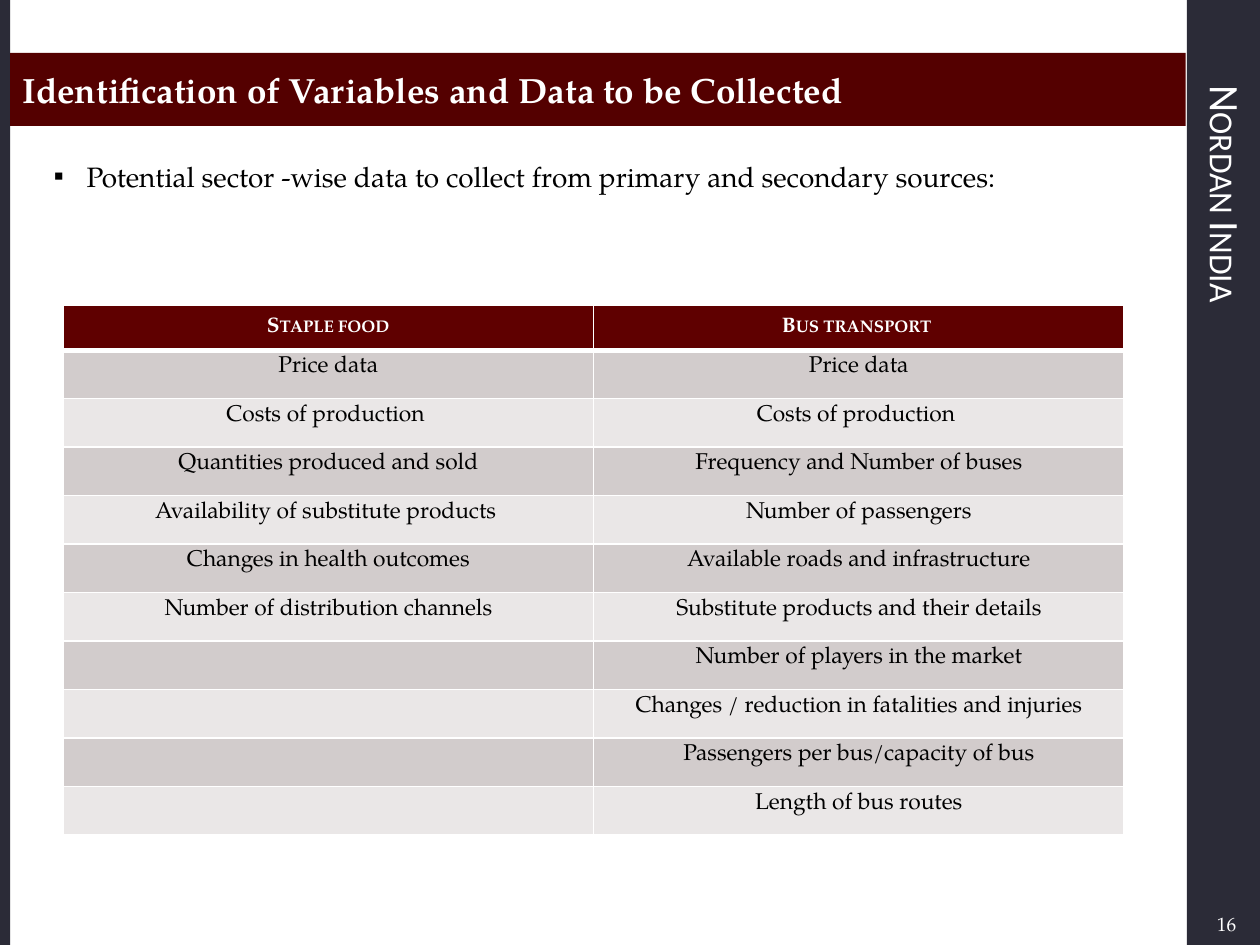
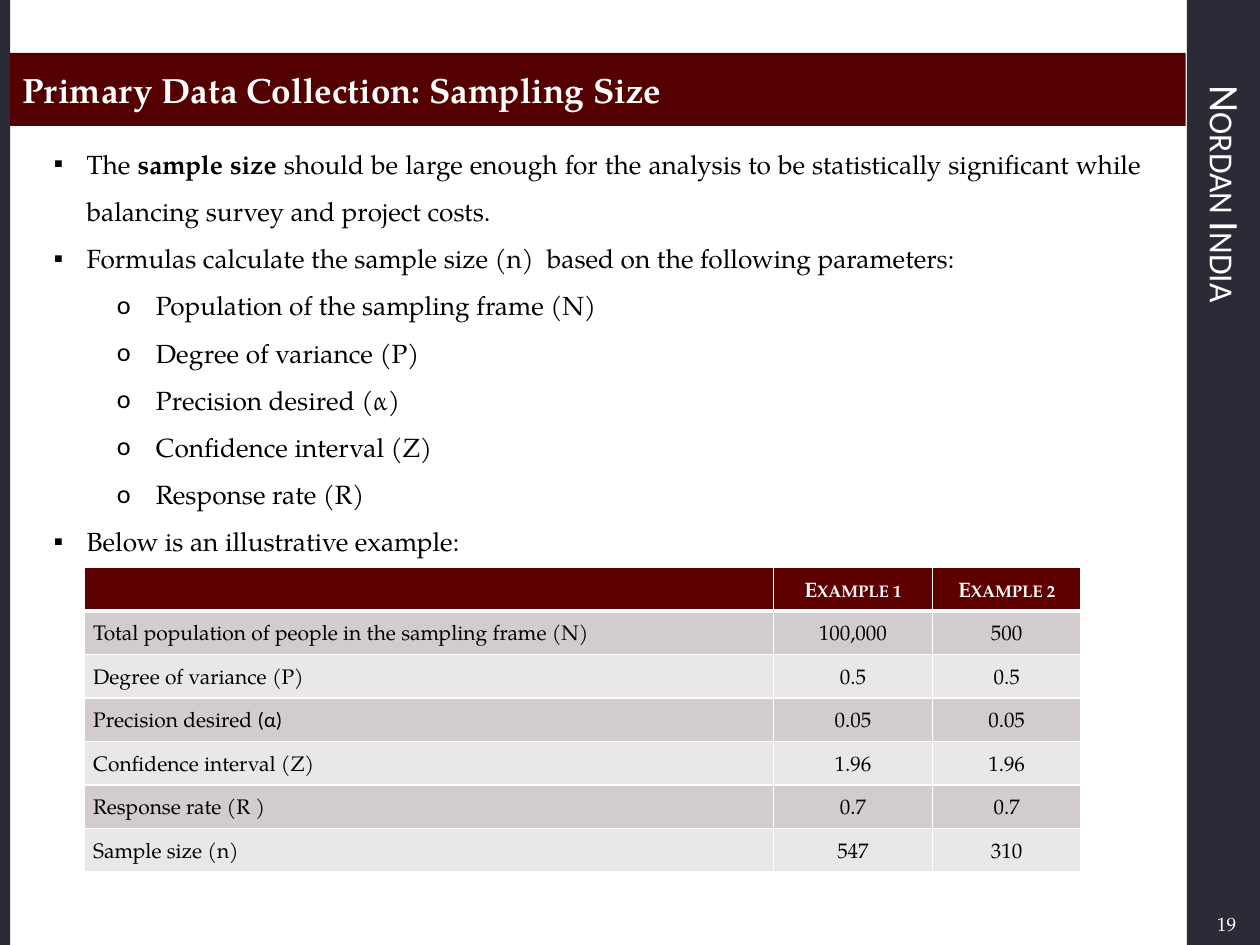
"""Builds two slides on data collection and sampling size, each with bullets and a table."""
import pptx
import pptx.dml.color
import pptx.enum.shapes
import pptx.enum.text
import pptx.oxml.ns
import pptx.util
from dataclasses import dataclass
from lxml import etree
from pptx.util import Inches, Pt

ALIGN = pptx.enum.text.PP_ALIGN
ANCHOR = pptx.enum.text.MSO_ANCHOR


@dataclass(frozen=True)
class Theme:
    serif: str = "TeX Gyre Pagella"
    sans: str = "Calibri"
    white: str = "FFFFFF"
    black: str = "000000"
    rail: str = "2B2B37"
    band: str = "540000"
    header: str = "5F0000"
    stripes: tuple = ("D2CCCC", "EAE7E7")
    title_size: int = 20
    brand_size: int = 24
    number_size: int = 11
    header_size: int = 12


THEME = Theme()
BRAND = "Nordan India"
BULLETS = (("▪", 0.26, 0.26), ("o", 0.81, 0.31))

SLIDES = [
    {
        "title": "Identification of Variables and Data to be Collected",
        "number": "16",
        "body": {
            "box": (0.33, 1.08, 8.83, 5.58), "size": 16, "space_after": 6,
            "points": [
                (0, ["Potential sector -wise data to collect from primary and secondary sources:"]),
            ],
        },
        "table": {
            "box": (0.5, 2.42, 8.42, 4.21), "columns": (4.21, 4.21), "header_height": 0.36,
            "size": 13, "anchor": ANCHOR.TOP, "inset": 0.05, "line": None,
            "labels": ALIGN.CENTER,
            "rows": [
                ("Staple food", "Bus transport "),
                ("Price data", "Price data"),
                ("Costs of production ", "Costs of production "),
                ("Quantities produced and sold", "Frequency and Number of buses"),
                ("Availability of substitute products ", "Number of passengers"),
                ("Changes in health outcomes", "Available roads and infrastructure"),
                ("Number of distribution channels", "Substitute products and their details"),
                ("", "Number of players in the market"),
                ("", "Changes / reduction in fatalities and injuries"),
                ("", "Passengers per bus/capacity of bus"),
                ("", "Length of bus routes"),
            ],
        },
    },
    {
        "title": "Primary Data Collection: Sampling Size",
        "number": "19",
        "body": {
            "box": (0.33, 1, 8.83, 6.17), "size": 15, "space_after": 0,
            "points": [
                (0, ["The ", ("sample size ", {"bold": True}),
                     "should be large enough for the analysis to be statistically significant "
                     "while balancing survey and project costs. "]),
                (0, ["Formulas calculate the sample size (n)  based on the following parameters:"]),
                (1, ["Population of the sampling frame (N)"]),
                (1, ["Degree of variance (P)"]),
                (1, ["Precision desired (α)"]),
                (1, ["Confidence interval (Z)"]),
                (1, ["Response rate (R)"]),
                (0, ["Below is an illustrative example:"]),
            ],
        },
        "table": {
            "box": (0.67, 4.5, 7.92, 2.42), "columns": (5.47, 1.26, 1.18), "header_height": 0.35,
            "size": 12, "anchor": ANCHOR.MIDDLE, "inset": 0, "line": 16,
            "labels": ALIGN.LEFT,
            "rows": [
                ("", "Example 1", "Example 2"),
                ("Total population of people in the sampling frame (N)", "100,000", "500"),
                ("Degree of variance (P)", "0.5", "0.5"),
                (["Precision desired ", ("(α)", {"font": THEME.sans})], "0.05", "0.05"),
                ("Confidence interval (Z)", "1.96", "1.96"),
                ("Response rate (R )", "0.7", "0.7"),
                ("Sample size (n)", "547", "310"),
            ],
        },
    },
]


def rgb(value):
    return pptx.dml.color.RGBColor.from_string(value)


def add_element(parent, tag, **attributes):
    element = etree.SubElement(parent, pptx.oxml.ns.qn(tag))
    for name, value in attributes.items():
        element.set(name, str(value))
    return element


def add_run(paragraph, text, size, color, font=THEME.serif, bold=False, small_caps=False):
    run = paragraph.add_run()
    run.text = text
    run.font.name = font
    run.font.size = Pt(size)
    run.font.bold = bold
    run.font.color.rgb = rgb(color)
    if small_caps:
        run.font._element.set("cap", "small")


def add_runs(paragraph, pieces, size, color, **style):
    for piece in pieces:
        text, changes = (piece, {}) if isinstance(piece, str) else piece
        add_run(paragraph, text, size, color, **{**style, **changes})


def add_bar(slide, box, color):
    bar = slide.shapes.add_shape(pptx.enum.shapes.MSO_SHAPE.RECTANGLE, *map(Inches, box))
    bar.shadow.inherit = False
    bar.fill.solid()
    bar.fill.fore_color.rgb = rgb(color)
    bar.line.fill.background()
    return bar


def prepare_frame(shape, anchor):
    frame = shape.text_frame
    frame.word_wrap = True
    frame.vertical_anchor = anchor
    return frame


def add_text_frame(slide, box, anchor):
    return prepare_frame(slide.shapes.add_textbox(*map(Inches, box)), anchor)


def add_frame(slide, title, number):
    add_bar(slide, (9.42, 0, 0.58, 7.5), THEME.rail)
    add_bar(slide, (0, 0, 0.08, 7.5), THEME.rail)

    paragraph = add_text_frame(slide, (8.83, 7.17, 1.08, 0.33), ANCHOR.MIDDLE).paragraphs[0]
    paragraph.alignment = ALIGN.RIGHT
    add_run(paragraph, number, THEME.number_size, THEME.white)

    brand = add_text_frame(slide, (9.42, 0.58, 0.58, 6.42), ANCHOR.MIDDLE)
    brand._txBody.bodyPr.set("vert", "vert")
    brand.paragraphs[0].line_spacing = 0.9
    add_run(brand.paragraphs[0], BRAND, THEME.brand_size, THEME.white,
            font=THEME.sans, small_caps=True)

    band = add_bar(slide, (0.08, 0.42, 9.33, 0.58), THEME.band)
    paragraph = prepare_frame(band, ANCHOR.MIDDLE).paragraphs[0]
    paragraph.alignment = ALIGN.LEFT
    add_run(paragraph, title, THEME.title_size, THEME.white, bold=True)


def add_body(slide, body):
    frame = add_text_frame(slide, body["box"], ANCHOR.TOP)
    for index, (level, pieces) in enumerate(body["points"]):
        paragraph = frame.add_paragraph() if index else frame.paragraphs[0]
        paragraph.level = level
        paragraph.alignment = ALIGN.JUSTIFY
        paragraph.line_spacing = 1.5
        paragraph.space_after = Pt(body["space_after"])
        mark, left, hanging = BULLETS[level]
        properties = paragraph._p.get_or_add_pPr()
        properties.set("marL", str(Inches(left)))
        properties.set("indent", str(-Inches(hanging)))
        add_element(properties, "a:buFont", typeface=THEME.sans)
        add_element(properties, "a:buChar", char=mark)
        add_runs(paragraph, pieces, body["size"], THEME.black)


def style_cell(cell, fill, top, bottom, inset):
    cell.margin_left = cell.margin_right = Inches(0.07)
    cell.margin_top = cell.margin_bottom = Inches(inset)
    properties = cell._tc.get_or_add_tcPr()
    for side, width in (("L", 1), ("R", 1), ("T", top), ("B", bottom)):
        border = add_element(properties, f"a:ln{side}", w=Pt(width))
        add_element(add_element(border, "a:solidFill"), "a:srgbClr", val=THEME.white)
    cell.fill.solid()
    cell.fill.fore_color.rgb = rgb(fill)


def add_data_table(slide, spec):
    rows, columns = spec["rows"], spec["columns"]
    table = slide.shapes.add_table(len(rows), len(columns), *map(Inches, spec["box"])).table
    table.horz_banding = False
    for column, width in zip(table.columns, columns):
        column.width = Inches(width)
    row_height = (spec["box"][3] - spec["header_height"]) / (len(rows) - 1)

    for row_index, values in enumerate(rows):
        is_header = row_index == 0
        table.rows[row_index].height = Inches(spec["header_height"] if is_header else row_height)
        fill = THEME.header if is_header else THEME.stripes[(row_index - 1) % 2]
        for column_index, value in enumerate(values):
            cell = table.cell(row_index, column_index)
            style_cell(cell, fill, 3 if row_index == 1 else 1, 3 if is_header else 1,
                       spec["inset"] if value else 0)
            cell.vertical_anchor = ANCHOR.MIDDLE if is_header else spec["anchor"]
            if not value:
                continue
            paragraph = cell.text_frame.paragraphs[0]
            is_label = column_index == 0 and not is_header
            paragraph.alignment = spec["labels"] if is_label else ALIGN.CENTER
            if spec["line"]:
                paragraph.line_spacing = Pt(spec["line"])
            pieces = [value] if isinstance(value, str) else value
            if is_header:
                add_runs(paragraph, pieces, THEME.header_size, THEME.white,
                         bold=True, small_caps=True)
            else:
                add_runs(paragraph, pieces, spec["size"], THEME.black)


def main():
    presentation = pptx.Presentation()
    presentation.slide_width = Inches(10)
    presentation.slide_height = Inches(7.5)
    for content in SLIDES:
        slide = presentation.slides.add_slide(presentation.slide_layouts[6])
        add_frame(slide, content["title"], content["number"])
        add_body(slide, content["body"])
        add_data_table(slide, content["table"])
    presentation.save("out.pptx")


if __name__ == "__main__":
    main()
